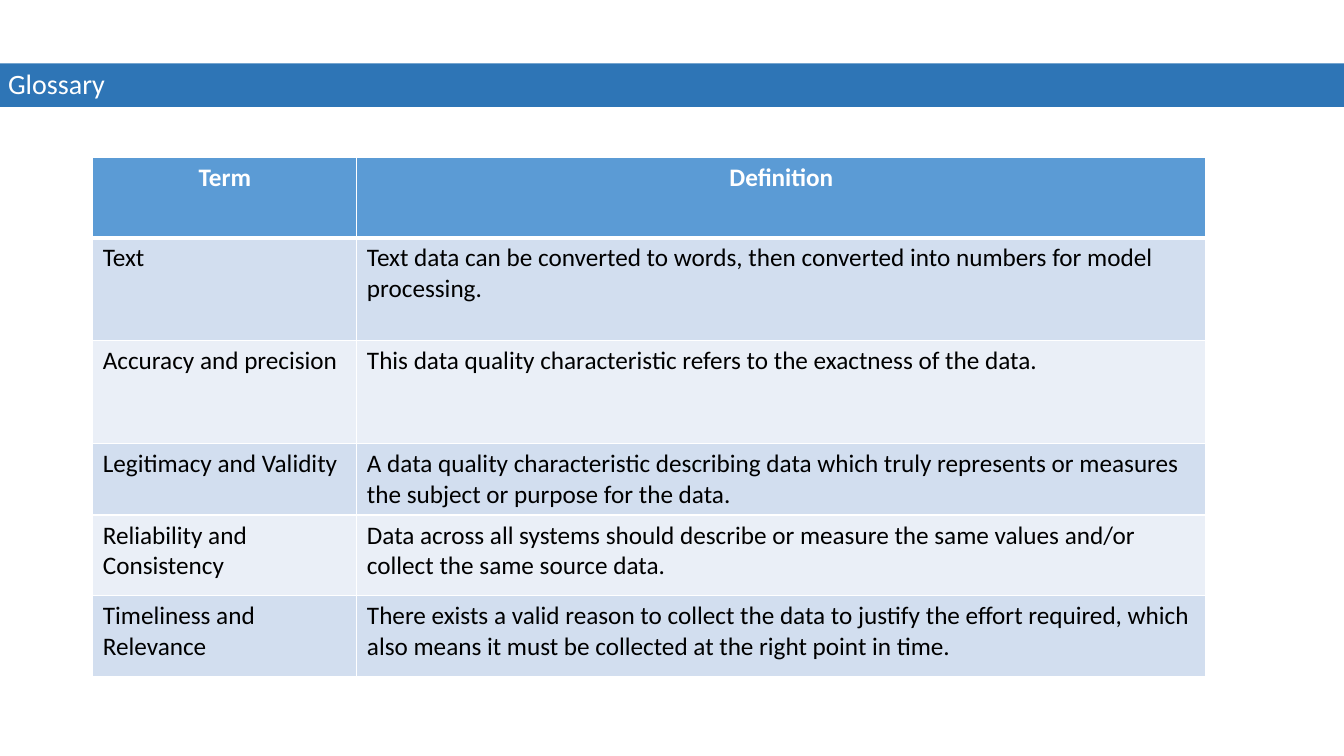
import pptx
import pptx.util
import pptx.dml.color
import pptx.enum.text
import pptx.oxml
import pptx.oxml.ns
import lxml.etree

Inches = pptx.util.Inches
Pt = pptx.util.Pt
RGBColor = pptx.dml.color.RGBColor
ALIGN = pptx.enum.text.PP_ALIGN
ANCHOR = pptx.enum.text.MSO_ANCHOR

WHITE = RGBColor(0xFF, 0xFF, 0xFF)
BLACK = RGBColor(0x00, 0x00, 0x00)
BAR = RGBColor(0x2E, 0x75, 0xB6)
HEAD = RGBColor(0x5B, 0x9B, 0xD5)
BANDS = (RGBColor(0xEA, 0xEF, 0xF7), RGBColor(0xD2, 0xDE, 0xEF))
FONT = "Calibri"

WIDTHS = (2.62, 8.42)
HEIGHTS = (0.8, 1.02, 1.02, 0.71, 0.8, 0.8)
TERMS = (
    ("Term", "Definition"),
    ("Text", "Text data can be converted to words, then converted into "
     "numbers for model processing."),
    ("Accuracy and precision", "This data quality characteristic refers to "
     "the exactness of the data."),
    ("Legitimacy and Validity", "A data quality characteristic describing "
     "data which truly represents or measures the subject or purpose for "
     "the data."),
    ("Reliability and Consistency", "Data across all systems should describe "
     "or measure the same values and/or collect the same source data."),
    ("Timeliness and Relevance", "There exists a valid reason to collect the "
     "data to justify the effort required, which also means it must be "
     "collected at the right point in time."),
)


def style(para, size, color, bold=False):
    for run in para.runs:
        run.font.name = FONT
        run.font.size = Pt(size)
        run.font.bold = bold
        run.font.color.rgb = color


def add_title(slide, text, left, top, width, height):
    title = slide.shapes.title
    title.left, title.top = Inches(left), Inches(top)
    title.width, title.height = Inches(width), Inches(height)
    title.fill.solid()
    title.fill.fore_color.rgb = BAR
    frame = title.text_frame
    frame.text = text
    frame.word_wrap = True
    frame.auto_size = pptx.enum.text.MSO_AUTO_SIZE.NONE
    frame.vertical_anchor = ANCHOR.MIDDLE
    para = frame.paragraphs[0]
    para.alignment = ALIGN.LEFT
    para.line_spacing = 0.9
    style(para, 20, WHITE)


def add_edges(cell, top, bottom):
    """Draw white cell borders; top and bottom widths are in points."""
    props = cell._tc.get_or_add_tcPr()
    for side, width in (("L", 1), ("R", 1), ("T", top), ("B", bottom)):
        line = lxml.etree.SubElement(
            props, pptx.oxml.ns.qn("a:ln" + side), w=str(Pt(width)))
        fill = lxml.etree.SubElement(line, pptx.oxml.ns.qn("a:solidFill"))
        lxml.etree.SubElement(
            fill, pptx.oxml.ns.qn("a:srgbClr"), val=str(WHITE))


def fill_cell(cell, text, row):
    head = row == 0
    add_edges(cell, 3 if row == 1 else 1, 3 if head else 1)
    cell.fill.solid()
    cell.fill.fore_color.rgb = HEAD if head else BANDS[row % 2]
    cell.text_frame.text = text
    para = cell.text_frame.paragraphs[0]
    para.alignment = ALIGN.CENTER if head else ALIGN.LEFT
    style(para, 18, WHITE if head else BLACK, head)


def add_terms(slide, left, top):
    table = slide.shapes.add_table(
        len(TERMS), len(WIDTHS), Inches(left), Inches(top),
        Inches(sum(WIDTHS)), Inches(sum(HEIGHTS))).table
    for col, width in zip(table.columns, WIDTHS):
        col.width = Inches(width)
    for row, height in zip(table.rows, HEIGHTS):
        row.height = Inches(height)
    for row, texts in enumerate(TERMS):
        for col, text in enumerate(texts):
            fill_cell(table.cell(row, col), text, row)


def main():
    deck = pptx.Presentation()
    deck.slide_width, deck.slide_height = Inches(13.33), Inches(7.5)
    slide = deck.slides.add_slide(deck.slide_layouts[5])
    add_title(slide, "Glossary", -0.02, 0.63, 13.35, 0.43)
    add_terms(slide, 0.92, 1.56)
    deck.save("out.pptx")


if __name__ == "__main__":
    main()
